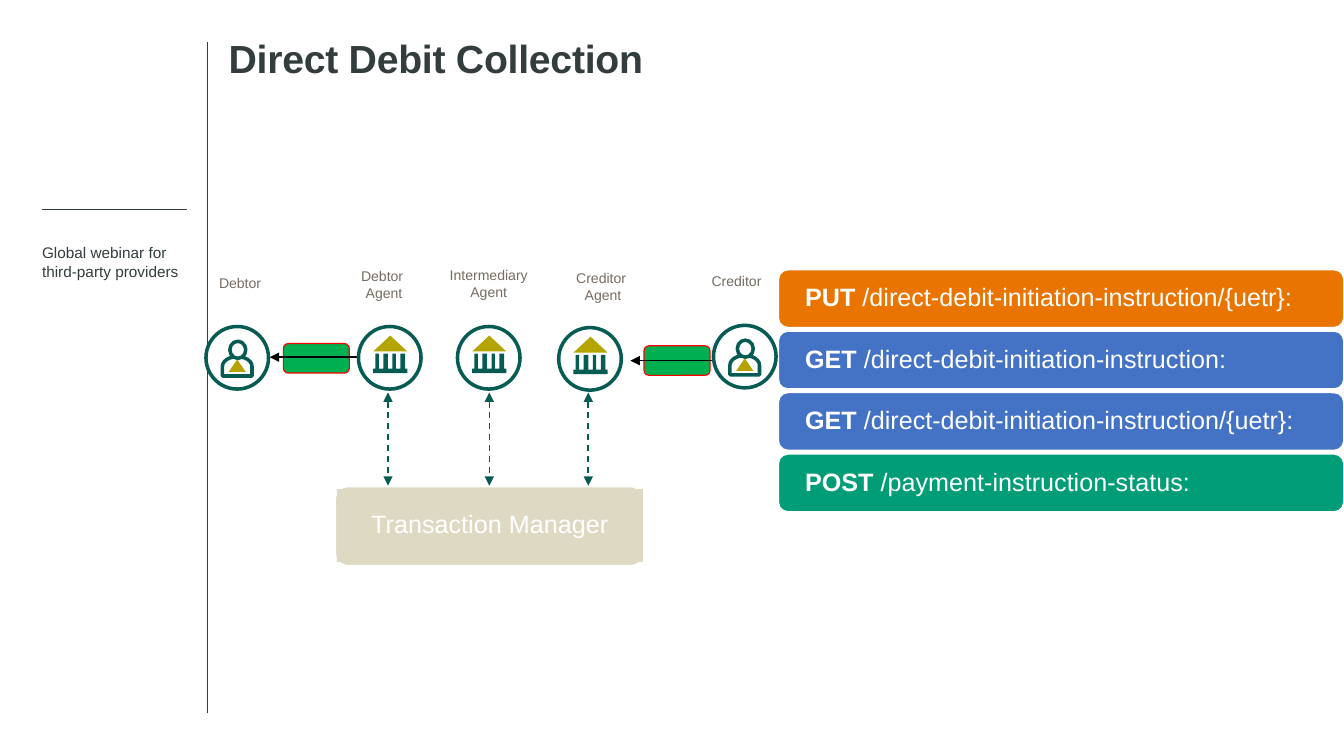
from dataclasses import dataclass

import pptx
import pptx.dml.color
import pptx.enum.dml
import pptx.enum.shapes
import pptx.enum.text
import pptx.oxml
import pptx.oxml.ns
import pptx.shapes.autoshape
import pptx.shapes.connector
import pptx.shapes.shapetree
import pptx.slide
import pptx.text.text
import pptx.util

PX_PER_INCH = 100
WHITE = "FFFFFF"
INK = "333D3E"
TEAL = "065C53"
GOLD = "B5A300"
SAND = "DDD9C3"
LABEL = "766C62"
BLUE = "4472C4"
CIRCLE = 55

SHAPE = pptx.enum.shapes.MSO_SHAPE
ALIGN = pptx.enum.text.PP_ALIGN
ANCHOR = pptx.enum.text.MSO_ANCHOR
Shapes = pptx.shapes.shapetree.SlideShapes | pptx.shapes.shapetree.GroupShapes
Shape = pptx.shapes.autoshape.Shape
Connector = pptx.shapes.connector.Connector


@dataclass
class Party:
    label: str
    label_box: tuple[int, int, int, int]
    x: int
    y: int
    is_bank: bool


@dataclass
class Endpoint:
    verb: str
    address: str
    color: str


PARTIES = [
    Party(" Debtor ", (179, 236, 64, 25), 181, 287, False),
    Party("Debtor \nAgent", (307, 230, 61, 40), 315, 287, True),
    Party("Intermediary\nAgent", (385, 229, 89, 40), 402, 287, True),
    Party("Creditor \nAgent", (496, 232, 68, 40), 491, 288, True),
    Party("Creditor ", (615, 235, 68, 25), 627, 286, False),
]
ENDPOINTS = [
    Endpoint("PUT", " /direct-debit-initiation-instruction/{uetr}:", "E97500"),
    Endpoint("GET", " /direct-debit-initiation-instruction:", BLUE),
    Endpoint("GET", " /direct-debit-initiation-instruction/{uetr}:", BLUE),
    Endpoint("POST", " /payment-instruction-status:", "009D77"),
]


def px(n: int) -> int:
    return n * pptx.util.Inches(1) // PX_PER_INCH


def rgb(color: str) -> pptx.dml.color.RGBColor:
    return pptx.dml.color.RGBColor.from_string(color)


def paint(sp: Shape, fill: str, line: str = "", width: float = 0) -> Shape:
    sp.shadow.inherit = False
    sp.fill.solid()
    sp.fill.fore_color.rgb = rgb(fill)
    if line:
        sp.line.color.rgb = rgb(line)
        sp.line.width = pptx.util.Pt(width)
    else:
        sp.line.fill.background()
    return sp


def add_box(shapes: Shapes, kind: pptx.enum.shapes.MSO_SHAPE, x: int, y: int, w: int, h: int,
            fill: str, line: str = "", width: float = 0) -> Shape:
    return paint(shapes.add_shape(kind, px(x), px(y), px(w), px(h)), fill, line, width)


def style(r: pptx.text.text._Run, size: float, color: str, bold: bool = False) -> None:
    r.font.name = "Arial"
    r.font.size = pptx.util.Pt(size)
    r.font.color.rgb = rgb(color)
    r.font.bold = bold


def set_insets(tf: pptx.text.text.TextFrame, x: int, y: int) -> None:
    tf.margin_left = tf.margin_right = px(x)
    tf.margin_top = tf.margin_bottom = px(y)


def add_text(s: pptx.slide.Slide, text: str, box: tuple[int, int, int, int], size: float,
             color: str, bold: bool = False) -> pptx.text.text.TextFrame:
    tf = s.shapes.add_textbox(*map(px, box)).text_frame
    tf.word_wrap = True
    set_insets(tf, 0, 0)
    tf.text = text
    for p in tf.paragraphs:
        style(p.runs[0], size, color, bold)
    return tf


def add_line(s: pptx.slide.Slide, x1: int, y1: int, x2: int, y2: int, color: str,
             width: float, ends: tuple[str, ...] = (), dashed: bool = False) -> Connector:
    c = s.shapes.add_connector(pptx.enum.shapes.MSO_CONNECTOR.STRAIGHT,
                               px(x1), px(y1), px(x2), px(y2))
    c.line.color.rgb = rgb(color)
    c.line.width = pptx.util.Pt(width)
    if dashed:
        c.line.dash_style = pptx.enum.dml.MSO_LINE.DASH
    ln = c.line._get_or_add_ln()
    ns = pptx.oxml.ns.nsdecls("a")
    for end in ends:
        ln.append(pptx.oxml.parse_xml(f'<a:{end} {ns} type="triangle"/>'))
    c._element.spPr.append(pptx.oxml.parse_xml(f"<a:effectLst {ns}/>"))
    return c


def add_person(shapes: Shapes, x: int, y: int) -> None:
    body = add_box(shapes, SHAPE.FLOWCHART_DELAY, x + 19, y + 22, 17, 26, WHITE, TEAL, 2.25)
    body.rotation = 270
    add_box(shapes, SHAPE.OVAL, x + 21, y + 13, 14, 15, WHITE, TEAL, 2.25)
    add_box(shapes, SHAPE.ISOSCELES_TRIANGLE, x + 20, y + 29, 15, 11, GOLD)


def add_bank(shapes: Shapes, x: int, y: int) -> None:
    left, top = x + 13, y + 24
    outline = [(0, 17), (0, 13)]
    for start, stop in ((2, 5), (9, 13), (17, 20), (24, 28)):
        outline += [(start, 13), (start, 0), (stop, 0), (stop, 13)]
    outline += [(30, 13), (30, 17)]
    points = [(px(left + dx), px(top + dy)) for dx, dy in outline]
    builder = shapes.build_freeform(*points[0])
    builder.add_line_segments(points[1:])
    paint(builder.convert_to_shape(), TEAL)
    add_box(shapes, SHAPE.ISOSCELES_TRIANGLE, left, y + 8, 30, 14, GOLD)


def add_party(s: pptx.slide.Slide, party: Party) -> None:
    tf = add_text(s, party.label, party.label_box, 8.9, LABEL)
    tf.word_wrap = False
    tf.auto_size = pptx.enum.text.MSO_AUTO_SIZE.SHAPE_TO_FIT_TEXT
    set_insets(tf, 10, 5)
    for p in tf.paragraphs:
        p.alignment = ALIGN.CENTER
    icon = s.shapes.add_group_shape().shapes
    add_box(icon, SHAPE.OVAL, party.x, party.y, CIRCLE, CIRCLE, WHITE, TEAL, 2.25)
    draw = add_bank if party.is_bank else add_person
    draw(icon, party.x, party.y)


def add_endpoint(s: pptx.slide.Slide, endpoint: Endpoint, y: int) -> None:
    sp = add_box(s.shapes, SHAPE.ROUNDED_RECTANGLE, 684, y, 497, 51, endpoint.color, WHITE, 1)
    tf = sp.text_frame
    tf.word_wrap = True
    tf.vertical_anchor = ANCHOR.MIDDLE
    set_insets(tf, 21, 3)
    p = tf.paragraphs[0]
    p.alignment = ALIGN.LEFT
    p.line_spacing = 0.9
    for text, bold in ((endpoint.verb, True), (endpoint.address, False)):
        r = p.add_run()
        r.text = text
        style(r, 15.9, WHITE, bold)


def add_manager(s: pptx.slide.Slide) -> Shape:
    frame = add_box(s.shapes, SHAPE.ROUNDED_RECTANGLE, 294, 427, 272, 71, SAND, WHITE, 2)
    tf = add_box(s.shapes, SHAPE.RECTANGLE, 296, 430, 269, 64, SAND).text_frame
    tf.text = "Transaction Manager"
    tf.word_wrap = True
    tf.vertical_anchor = ANCHOR.MIDDLE
    set_insets(tf, 7, 7)
    p = tf.paragraphs[0]
    p.alignment = ALIGN.CENTER
    p.line_spacing = 0.9
    style(p.runs[0], 15.9, WHITE)
    return frame


def main() -> None:
    prs = pptx.Presentation()
    prs.slide_width, prs.slide_height = pptx.util.Cm(30), pptx.util.Cm(16.88)
    s = prs.slides.add_slide(prs.slide_layouts[6])
    add_line(s, 182, 37, 182, 627, INK, 0.5)
    add_line(s, 37, 184, 164, 184, INK, 0.5)
    title = add_text(s, "Direct Debit Collection", (201, 32, 861, 79), 24.8, INK, True)
    title.paragraphs[0].line_spacing = 0.98
    title.paragraphs[0].runs[0].font._element.set("spc", "-20")
    add_text(s, "Global webinar for third-party providers", (37, 214, 126, 191), 9.7, INK)
    manager = add_manager(s)
    for x in (341, 430, 517):
        c = add_line(s, x, 345, x, 427, TEAL, 1, ("headEnd", "tailEnd"), True)
        if x == 430:
            c.end_connect(manager, 0)
    for x, y, start, stop, arrow_y in ((249, 302, 237, 315, 314), (566, 304, 554, 629, 317)):
        add_box(s.shapes, SHAPE.ROUNDED_RECTANGLE, x, y, 58, 26, "00B050", "FF0000", 0.75)
        add_line(s, start, arrow_y, stop, arrow_y, "000000", 1, ("headEnd",))
    for i, endpoint in enumerate(ENDPOINTS):
        add_endpoint(s, endpoint, 237 + 54 * i)
    for party in PARTIES:
        add_party(s, party)
    prs.save("out.pptx")


if __name__ == "__main__":
    main()
